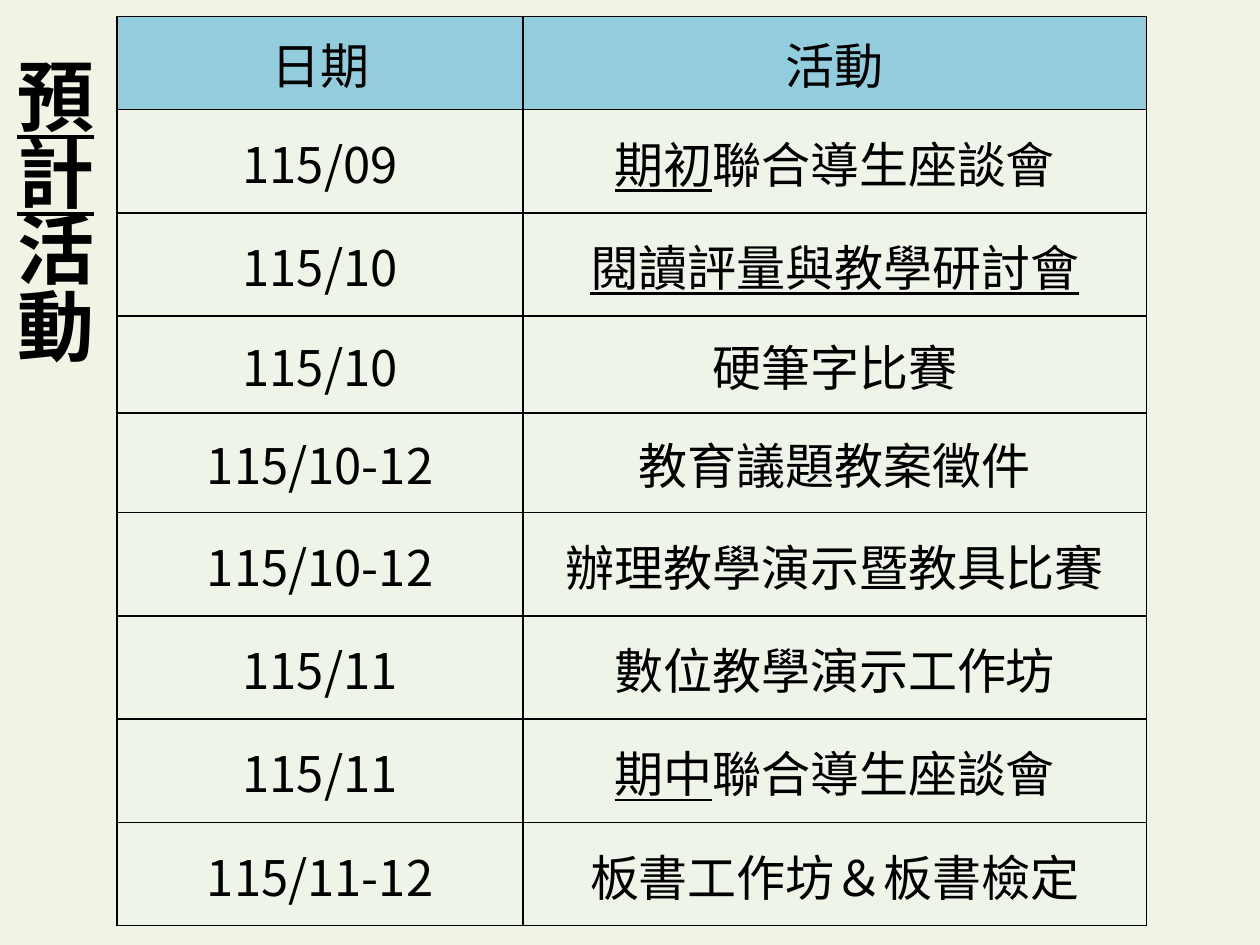
from dataclasses import dataclass

from lxml.etree import SubElement
from pptx import Presentation
from pptx.dml.color import RGBColor
from pptx.enum.text import MSO_ANCHOR, PP_ALIGN
from pptx.oxml.ns import qn
from pptx.util import Inches, Pt


@dataclass(frozen=True)
class Theme:
    font: str = "Noto Sans CJK SC"
    text: str = "000000"
    background: str = "EFF4E5"
    header: str = "93CDDD"
    body: str = "EEF4E8"
    title_size: int = 44
    table_size: int = 28
    border_width: int = 1


THEME = Theme()
HEADINGS = ("日期", "活動")
ACTIVITIES = [
    ("115/09", "期初", "聯合導生座談會"),
    ("115/10", "閱讀評量與教學研討會", ""),
    ("115/10", "", "硬筆字比賽"),
    ("115/10-12", "", "教育議題教案徵件"),
    ("115/10-12", "", "辦理教學演示暨教具比賽"),
    ("115/11", "", "數位教學演示工作坊"),
    ("115/11", "期中", "聯合導生座談會"),
    ("115/11-12", "", "板書工作坊＆板書檢定"),
]
COLUMN_WIDTHS = (3.22, 4.95)
ROW_HEIGHTS = (0.74, 0.82, 0.82, 0.77, 0.79, 0.82, 0.82, 0.82, 0.82)


def apply_format(target, values):
    for name, value in values.items():
        setattr(target, name, value)


def fill_solid(fill, color):
    fill.solid()
    fill.fore_color.rgb = RGBColor.from_string(color)


def add_text(paragraph, text, size, **format_values):
    if not text:
        return
    run = paragraph.add_run()
    run.text = text
    values = {"name": THEME.font, "size": Pt(size), **format_values}
    apply_format(run.font, values)
    run.font.color.rgb = RGBColor.from_string(THEME.text)
    SubElement(run.font._element, qn("a:ea"), typeface=THEME.font)


def add_borders(cell):
    properties = cell._tc.get_or_add_tcPr()
    for position, side in enumerate(("lnL", "lnR", "lnT", "lnB")):
        line = SubElement(properties, qn(f"a:{side}"), w=str(Pt(THEME.border_width)))
        solid = SubElement(line, qn("a:solidFill"))
        SubElement(solid, qn("a:srgbClr"), val=THEME.text)
        properties.insert(position, line)


def format_cell(cell, underlined, plain, color, side_margin):
    apply_format(cell, {
        "vertical_anchor": MSO_ANCHOR.MIDDLE,
        "margin_left": Inches(side_margin),
        "margin_right": Inches(side_margin),
        "margin_top": Inches(0.01),
        "margin_bottom": 0,
    })
    fill_solid(cell.fill, color)
    add_borders(cell)
    paragraph = cell.text_frame.paragraphs[0]
    paragraph.alignment = PP_ALIGN.CENTER
    add_text(paragraph, underlined, THEME.table_size, underline=True)
    add_text(paragraph, plain, THEME.table_size)


def add_schedule(slide):
    shape = slide.shapes.add_table(
        len(ROW_HEIGHTS), len(COLUMN_WIDTHS), Inches(0.93), Inches(0.13),
        Inches(sum(COLUMN_WIDTHS)), Inches(sum(ROW_HEIGHTS)),
    )
    table = shape.table
    for column, width in zip(table.columns, COLUMN_WIDTHS):
        column.width = Inches(width)
    for row, height in zip(table.rows, ROW_HEIGHTS):
        row.height = Inches(height)
    for index, heading in enumerate(HEADINGS):
        format_cell(table.cell(0, index), "", heading, THEME.header, 0.03)
    for index, (date, underlined, plain) in enumerate(ACTIVITIES, start=1):
        format_cell(table.cell(index, 0), "", date, THEME.body, 0.05)
        format_cell(table.cell(index, 1), underlined, plain, THEME.body, 0.05)


def add_title(slide):
    shape = slide.shapes.add_textbox(
        Inches(0.04), Inches(-0.42), Inches(0.88), Inches(4.29)
    )
    frame = shape.text_frame
    apply_format(frame, {"word_wrap": True, "vertical_anchor": MSO_ANCHOR.MIDDLE})
    paragraph = frame.paragraphs[0]
    paragraph.line_spacing = 0.83
    add_text(paragraph, "預計", THEME.title_size, bold=True, underline=True)
    add_text(paragraph, "活動", THEME.title_size, bold=True)


def main():
    presentation = Presentation()
    apply_format(presentation, {"slide_width": Inches(10), "slide_height": Inches(7.5)})
    slide = presentation.slides.add_slide(presentation.slide_layouts[6])
    fill_solid(slide.background.fill, THEME.background)
    add_title(slide)
    add_schedule(slide)
    presentation.save("out.pptx")


if __name__ == "__main__":
    main()
